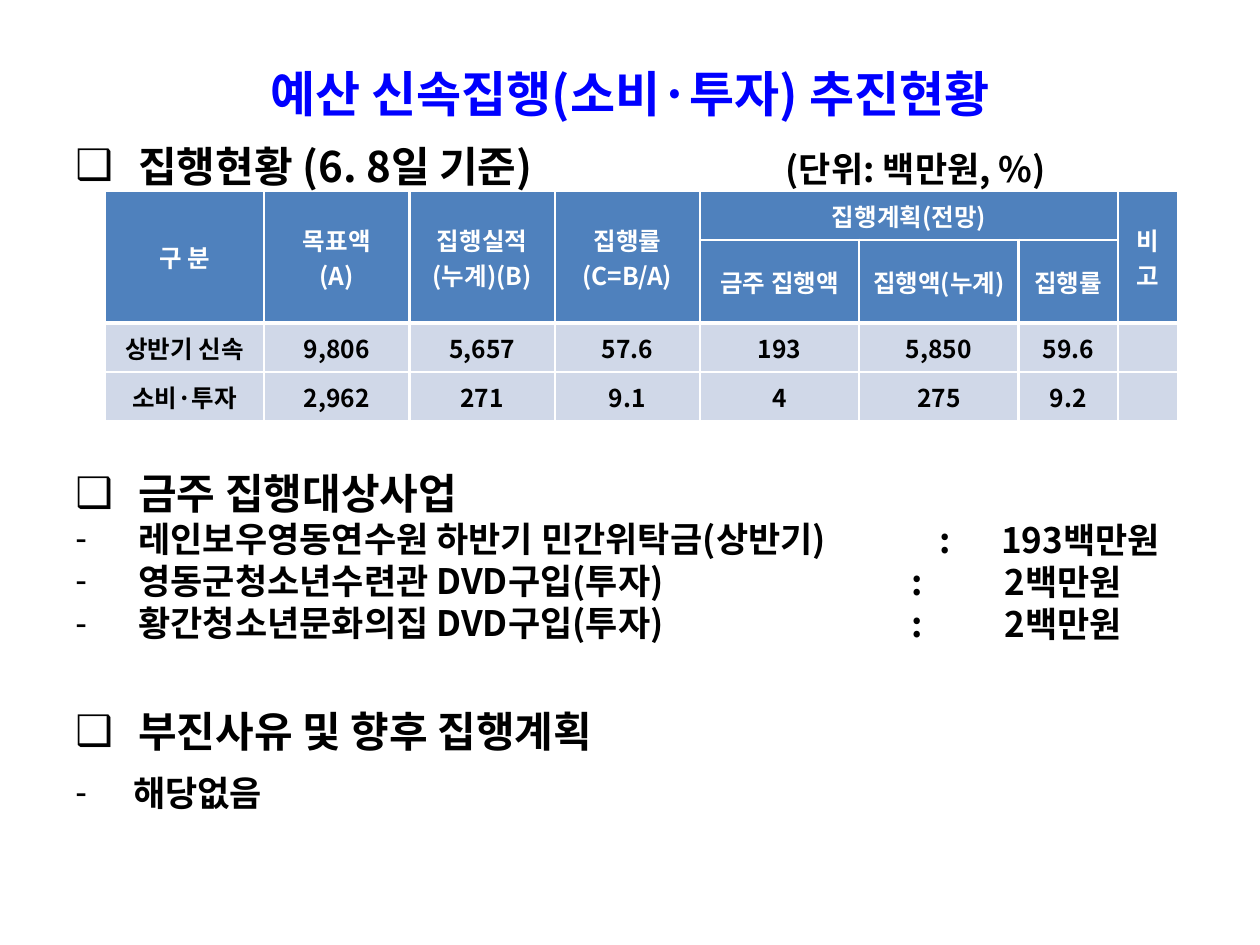
import pptx
import pptx.dml.color
import pptx.enum.text
import pptx.oxml
import pptx.oxml.ns
import pptx.util
from lxml import etree

Pt = pptx.util.Pt
CENTER = pptx.enum.text.PP_ALIGN.CENTER
FONT = "Noto Sans CJK KR"
BLACK, WHITE, BLUE = "000000", "FFFFFF", "0000FF"
HEADER_FILL, BODY_FILL = "4F81BD", "D0D8E8"

TITLE = "예산 신속집행(소비·투자) 추진현황"
UNIT = "(단위: 백만원, %)"
# project, left of colon, amount, left of amount
PROJECTS = [
    ("레인보우영동연수원 하반기 민간위탁금(상반기)", 537, "193백만원", 572),
    ("영동군청소년수련관 DVD구입(투자)", 521, "2백만원", 574),
    ("황간청소년문화의집 DVD구입(투자)", 521, "2백만원", 574),
]
HEADING = dict(size=24, line=34, bullet="❑", indent=(72, -36))
ITEM = dict(size=20, line=24, bullet="-", indent=(72, -36))
OUTLINE = [
    (TITLE, dict(size=28, line=40, color=BLUE, align=CENTER)),
    ("집행현황 (6. 8일 기준)", dict(HEADING, before=5)),
    ("금주 집행대상사업", dict(HEADING, before=153)),
    *[(project[0], ITEM) for project in PROJECTS],
    ("부진사유 및 향후 집행계획", dict(HEADING, before=30)),
    ("해당없음", dict(ITEM, before=9, indent=(69, -33))),
]
UNIT_TOP, PROJECTS_TOP = 84, 296

COLUMNS = [91, 83, 83, 83, 91, 91, 57, 34]
ROWS = [27.5, 47.5, 28, 28]
CELLS = [
    ["구 분", "목표액\n(A)", "집행실적(누계)(B)", "집행률\n(C=B/A)", "집행계획(전망)", "", "", "비 고"],
    ["", "", "", "", "금주 집행액", "집행액(누계)", "집행률", ""],
    ["상반기 신속", "9,806", "5,657", "57.6", "193", "5,850", "59.6", ""],
    ["소비·투자", "2,962", "271", "9.1", "4", "275", "9.2", ""],
]
HEADER_ROWS = 2
MERGES = [((0, column), (1, column)) for column in (0, 1, 2, 3, 7)] + [((0, 4), (0, 6))]


def rgb(value):
    return pptx.dml.color.RGBColor.from_string(value)


def add_child(parent, tag, **attributes):
    return etree.SubElement(parent, pptx.oxml.ns.qn(tag), attributes)


def set_font(para, size, color):
    font = para.font
    font.name, font.size, font.bold = FONT, Pt(size), True
    font.color.rgb = rgb(color)
    add_child(font._element, "a:ea", typeface=FONT)


def set_bullet(para, mark, indent):
    properties = para._p.get_or_add_pPr()
    margin, hanging = indent
    properties.set("marL", str(Pt(margin)))
    properties.set("indent", str(Pt(hanging)))
    defaults = para.font._element
    color = etree.Element(pptx.oxml.ns.qn("a:buClr"))
    add_child(color, "a:srgbClr", val=BLACK)
    defaults.addprevious(color)
    for tag, key, value in (("a:buFont", "typeface", "Arial"), ("a:buChar", "char", mark)):
        defaults.addprevious(etree.Element(pptx.oxml.ns.qn(tag), {key: value}))


def write(para, text, size, line, color=BLACK, align=None, before=0, bullet=None, indent=None):
    para.text = text
    para.alignment = align
    para.line_spacing, para.space_before = Pt(line), Pt(before)
    set_font(para, size, color)
    if bullet:
        set_bullet(para, bullet, indent)


def add_box(page, left, top, width, height):
    box = page.shapes.add_textbox(Pt(left), Pt(top), Pt(width), Pt(height))
    box.text_frame.word_wrap = True
    return box.text_frame


def add_label(page, text, left, top, width):
    frame = add_box(page, left, top, width, 24)
    frame.margin_left = frame.margin_right = frame.margin_top = frame.margin_bottom = 0
    write(frame.paragraphs[0], text, size=20, line=24)


def set_borders(cell, widths):
    """Draw white borders; widths are left, right, top, bottom."""
    properties = cell._tc.get_or_add_tcPr()
    for position, (side, width) in enumerate(zip("LRTB", widths)):
        border = pptx.oxml.parse_xml(
            f'<a:ln{side} {pptx.oxml.ns.nsdecls("a")} w="{Pt(width)}"><a:solidFill>'
            f'<a:srgbClr val="{WHITE}"/></a:solidFill></a:ln{side}>')
        properties.insert(position, border)


def add_status_table(page):
    table = page.shapes.add_table(len(ROWS), len(COLUMNS), Pt(60), Pt(109.5),
                                  Pt(sum(COLUMNS)), Pt(sum(ROWS))).table
    table.first_row = table.horz_banding = False
    for column, width in zip(table.columns, COLUMNS):
        column.width = Pt(width)
    for row, height in zip(table.rows, ROWS):
        row.height = Pt(height)
    verticals = [1] + [1.5] * (len(COLUMNS) - 2) + [1, 1]
    horizontals = [1, 1.5, 2.25, 1.5, 1]
    for r, texts in enumerate(CELLS):
        header = r < HEADER_ROWS
        for c, text in enumerate(texts):
            cell = table.cell(r, c)
            cell.vertical_anchor = pptx.enum.text.MSO_ANCHOR.MIDDLE
            cell.fill.solid()
            cell.fill.fore_color.rgb = rgb(HEADER_FILL if header else BODY_FILL)
            set_borders(cell, verticals[c:c + 2] + horizontals[r:r + 2])
            if not text:
                cell.margin_top = cell.margin_bottom = 0
                continue
            cell.text = text
            for para in cell.text_frame.paragraphs:
                para.alignment = CENTER
                set_font(para, 14, WHITE if header else BLACK)
    for first, last in MERGES:
        table.cell(*first).merge(table.cell(*last))


def main():
    deck = pptx.Presentation()
    deck.slide_width, deck.slide_height = Pt(720), Pt(540)
    page = deck.slides.add_slide(deck.slide_layouts[6])

    body = add_box(page, 0, 19.5, 720, 511)
    body.margin_top = Pt(10.5)
    for index, (text, style) in enumerate(OUTLINE):
        write(body.add_paragraph() if index else body.paragraphs[0], text, **style)

    add_label(page, UNIT, 449, UNIT_TOP, 200)
    for index, (_, colon_left, amount, amount_left) in enumerate(PROJECTS):
        top = PROJECTS_TOP + index * ITEM["line"]
        add_label(page, ":", colon_left, top, 20)
        add_label(page, amount, amount_left, top, 120)

    add_status_table(page)
    deck.save("out.pptx")


if __name__ == "__main__":
    main()
